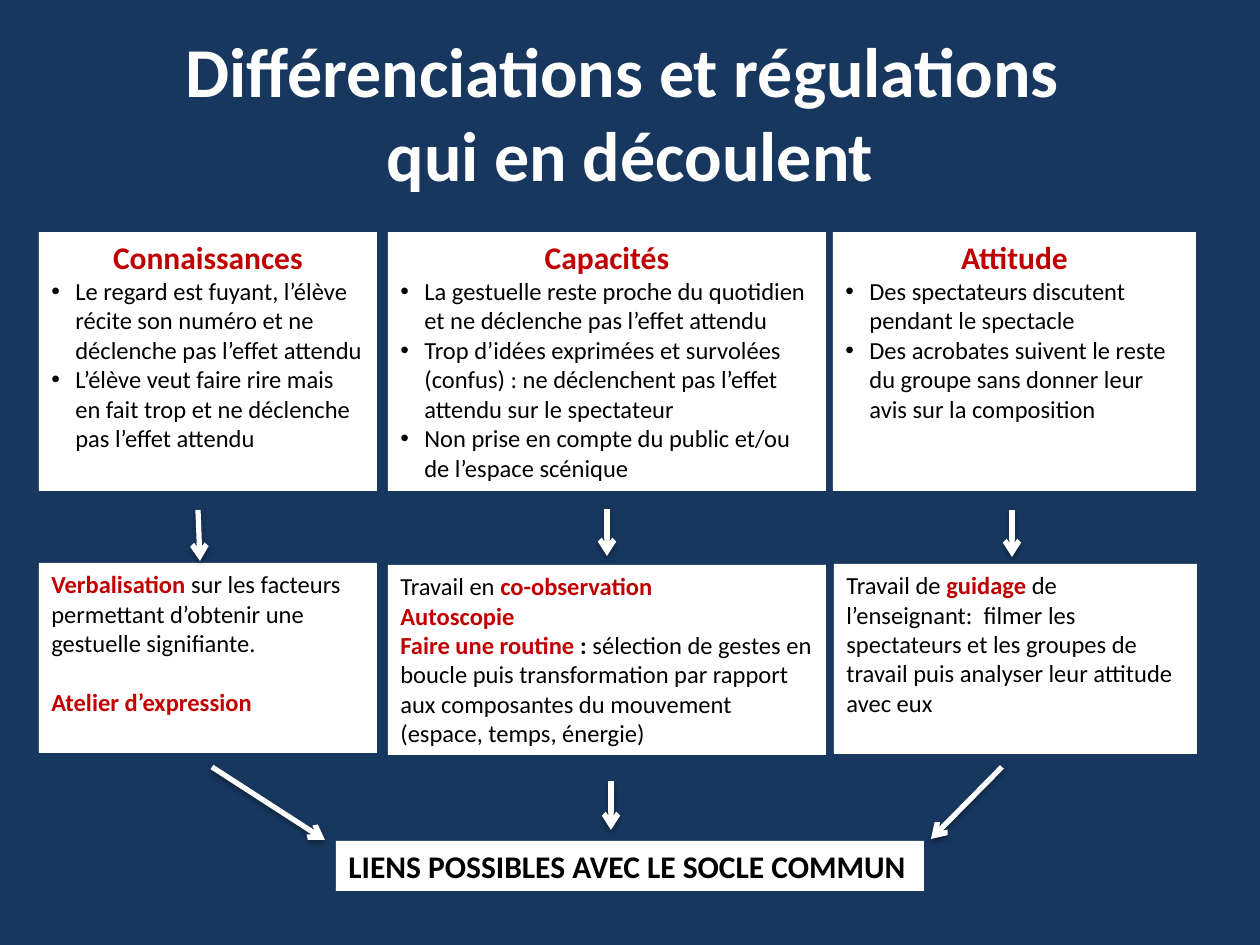
from lxml import etree
from pptx import Presentation
from pptx.dml.color import RGBColor
from pptx.enum.shapes import MSO_CONNECTOR
from pptx.enum.text import MSO_ANCHOR, MSO_AUTO_SIZE, PP_ALIGN
from pptx.oxml import parse_xml
from pptx.oxml.ns import nsdecls, qn
from pptx.util import Inches, Pt

PX = 7257  # EMU per pixel, 126 pixels to the inch
NAVY, WHITE, BLACK, RED = "17375E", "FFFFFF", "000000", "C00000"
FONT = "Calibri"


def color(hex_code):
    return RGBColor.from_string(hex_code)


def add_panel(left, top, width, height, paragraphs):
    """Add a white box; each paragraph is (size, style, space before, runs)."""
    panel = slide.shapes.add_textbox(left * PX, top * PX, width * PX, height * PX)
    panel.fill.solid()
    panel.fill.fore_color.rgb = color(WHITE)
    frame = panel.text_frame
    frame.word_wrap = True
    frame.auto_size = MSO_AUTO_SIZE.NONE
    for index, (size, style, space, runs) in enumerate(paragraphs):
        paragraph = frame.add_paragraph() if index else frame.paragraphs[0]
        if style == "heading":
            paragraph.alignment = PP_ALIGN.CENTER
        elif style == "bullet":
            properties = paragraph._p.get_or_add_pPr()
            properties.set("marL", str(24 * PX))
            properties.set("indent", str(-24 * PX))
            etree.SubElement(properties, qn("a:buFont")).set("typeface", "Arial")
            etree.SubElement(properties, qn("a:buChar")).set("char", "•")
        if space:
            paragraph.space_before = Pt(space)
        for text, ink, bold in runs:
            run = paragraph.add_run()
            run.text = text
            run.font.name = FONT
            run.font.size = Pt(size)
            run.font.bold = bold
            run.font.color.rgb = color(ink)


prs = Presentation()
prs.slide_width, prs.slide_height = Inches(10), Inches(7.5)
slide = prs.slides.add_slide(prs.slide_layouts[5])
slide.background.fill.solid()
slide.background.fill.fore_color.rgb = color(NAVY)

# Title
title = slide.shapes.title
title.left, title.top, title.width, title.height = 63 * PX, 33 * PX, 1134 * PX, 158 * PX
title.text_frame.vertical_anchor = MSO_ANCHOR.MIDDLE
title.text_frame.auto_size = MSO_AUTO_SIZE.NONE
heading = title.text_frame.paragraphs[0]
heading.alignment = PP_ALIGN.CENTER
for number, line in enumerate(["Différenciations et régulations ", "qui en découlent"]):
    if number:
        heading.add_line_break()
    run = heading.add_run()
    run.text = line
    run.font.name = FONT
    run.font.size = Pt(40)
    run.font.bold = True
    run.font.color.rgb = color(WHITE)

# Observations: left, width, heading, bullets
observations = [
    (39, 338, "Connaissances", [
        "Le regard est fuyant, l’élève récite son numéro et ne déclenche pas l’effet attendu",
        "L’élève veut faire rire mais en fait trop et ne déclenche pas l’effet attendu",
    ]),
    (388, 438, "Capacités", [
        "La gestuelle reste proche du quotidien et ne déclenche pas l’effet attendu",
        "Trop d’idées exprimées et survolées (confus) : ne déclenchent pas l’effet attendu "
        "sur le spectateur",
        "Non prise en compte du public et/ou de l’espace scénique",
    ]),
    (833, 363, "Attitude", [
        "Des spectateurs discutent pendant le spectacle",
        "Des acrobates suivent le reste du groupe sans donner leur avis sur la composition",
    ]),
]
for left, width, topic, remarks in observations:
    bullets = [(14, "bullet", 0, [(remark, BLACK, False)]) for remark in remarks]
    add_panel(left, 232, width, 259,
              [(18, "heading", 0, [(topic, RED, True)])] + bullets)

# Regulations: left, top, width, paragraphs of (space before, runs)
regulations = [
    (39, 563, 338, [
        (0, [("Verbalisation ", RED, True),
             ("sur les facteurs permettant d’obtenir une gestuelle signifiante.", BLACK, False)]),
        (17, [("Atelier d’expression", RED, True)]),
    ]),
    (388, 565, 438, [
        (0, [("Travail en ", BLACK, False), ("co-observation", RED, True)]),
        (0, [("Autoscopie", RED, True)]),
        (0, [("Faire une routine ", RED, True), (": ", BLACK, True),
             ("sélection de gestes en boucle puis transformation par rapport aux composantes "
              "du mouvement (espace, temps, énergie)", BLACK, False)]),
    ]),
    (834, 564, 363, [
        (0, [("Travail de ", BLACK, False), ("guidage ", RED, True),
             ("de l’enseignant:  filmer les spectateurs et les groupes de travail puis "
              "analyser leur attitude avec eux", BLACK, False)]),
    ]),
]
for left, top, width, advice in regulations:
    add_panel(left, top, width, 190,
              [(14, "plain", space, runs) for space, runs in advice])

add_panel(336, 841, 588, 50,
          [(18, "plain", 0, [("LIENS POSSIBLES AVEC LE SOCLE COMMUN", BLACK, True)])])

# Arrows: start x, start y, end x, end y
arrows = [
    (198, 510, 200, 561), (607, 509, 607, 556), (1012, 510, 1012, 557),
    (611, 781, 611, 830), (212, 767, 325, 840), (1002, 767, 931, 839),
]
for points in arrows:
    arrow = slide.shapes.add_connector(MSO_CONNECTOR.STRAIGHT, *(point * PX for point in points))
    arrow.line.color.rgb = color(WHITE)
    arrow.line.width = Pt(3)
    etree.SubElement(arrow.line._get_or_add_ln(), qn("a:tailEnd")).set("type", "arrow")
    arrow._element.spPr.append(parse_xml(
        f'<a:effectLst {nsdecls("a")}>'
        '<a:outerShdw blurRad="40000" dist="23000" dir="5400000" rotWithShape="0">'
        f'<a:srgbClr val="{BLACK}"><a:alpha val="35000"/></a:srgbClr>'
        '</a:outerShdw></a:effectLst>'))

prs.save("out.pptx")
